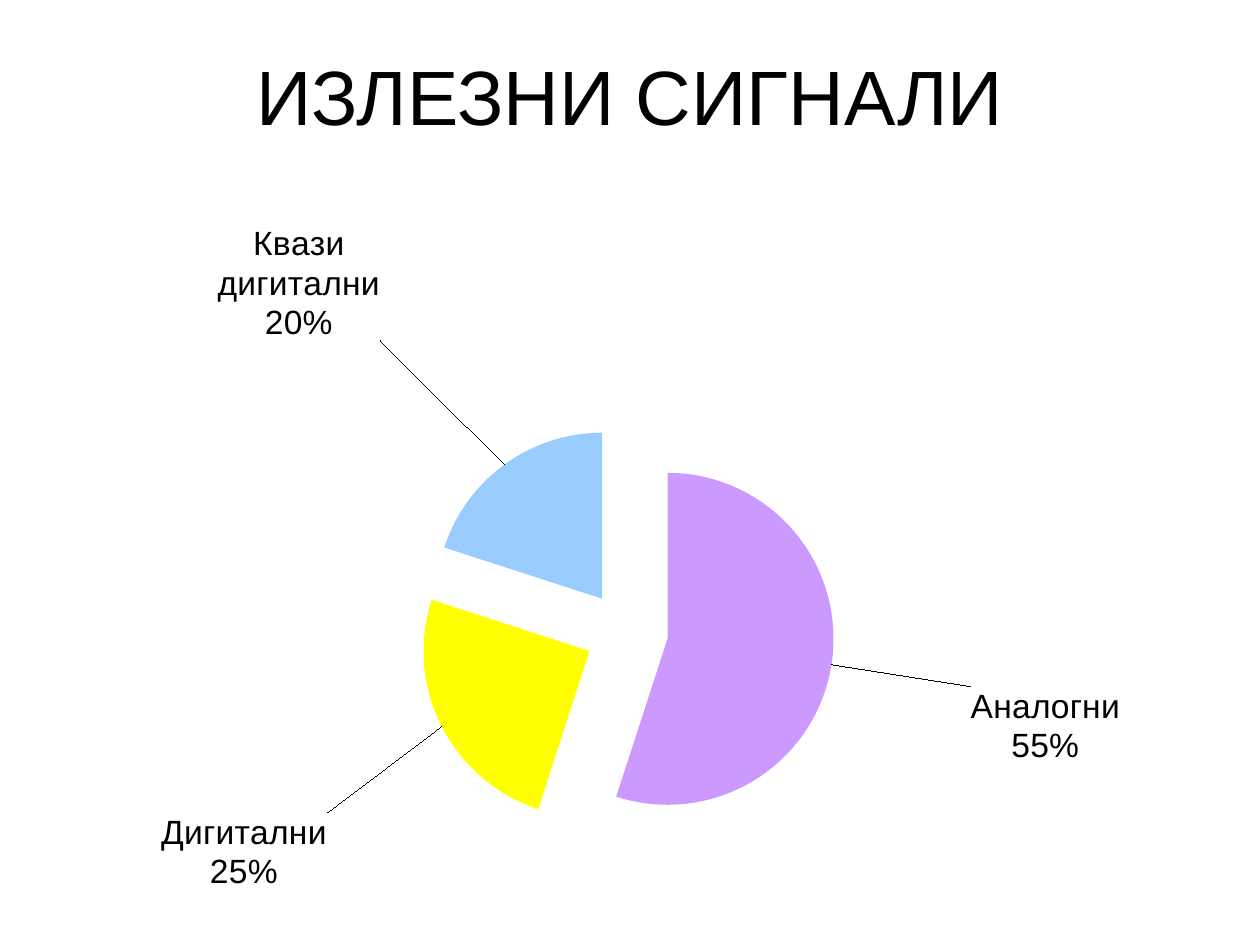
from lxml import etree
from pptx import Presentation
from pptx.chart.data import CategoryChartData
from pptx.dml.color import RGBColor
from pptx.enum.chart import XL_CHART_TYPE, XL_LABEL_POSITION
from pptx.enum.text import MSO_ANCHOR, PP_ALIGN
from pptx.oxml import parse_xml
from pptx.oxml.ns import nsdecls, qn
from pptx.util import Inches, Pt

PIE = XL_CHART_TYPE.PIE
OUTSIDE = XL_LABEL_POSITION.OUTSIDE_END
MIDDLE = MSO_ANCHOR.MIDDLE
CENTER = PP_ALIGN.CENTER

TITLE = "ИЗЛЕЗНИ СИГНАЛИ"
SLICES = [
    ("Аналогни", 55, "CC99FF", (0.11, 0.03)),
    ("Дигитални", 25, "FFFF00", (-0.09, 0.12)),
    ("Квази дигитални", 20, "99CCFF", (-0.1, -0.17)),
]


def rgb(value):
    return RGBColor.from_string(value)


def format_font(font, size, color="000000", name="Arial", bold=False):
    font.size = Pt(size)
    font.name = name
    font.bold = bold
    font.color.rgb = rgb(color)


def write(tf, text, align=CENTER, **fmt):
    tf.text = text
    for p in tf.paragraphs:
        p.alignment = align
        for r in p.runs:
            format_font(r.font, **fmt)


def layout(**values):
    items = "".join(f'<c:{k} val="{v}"/>' for k, v in values.items())
    return parse_xml(
        f'<c:layout {nsdecls("c")}><c:manualLayout>{items}</c:manualLayout></c:layout>'
    )


class SlideBuilder:
    def __init__(self, prs):
        self.slide = prs.slides.add_slide(prs.slide_layouts[5])

    def title(self, text, x, y, w, h):
        sp = self.slide.shapes.title
        sp.left, sp.top, sp.width, sp.height = map(Inches, (x, y, w, h))
        sp.fill.solid()
        sp.fill.fore_color.rgb = rgb("FFFFFF")
        sp.text_frame.vertical_anchor = MIDDLE
        write(sp.text_frame, text, size=44)

    def pie(self, name, slices, x, y, w, h, plot, explosion):
        data = CategoryChartData(number_format="0")
        data.categories = [s[0] for s in slices]
        data.add_series(name, [s[1] for s in slices])
        frame = self.slide.shapes.add_chart(PIE, *map(Inches, (x, y, w, h)), data)
        chart = frame.chart
        chart.has_legend = False
        chart.has_title = False
        format_font(chart.font, 19.2)
        pie = chart.plots[0]
        pie.vary_by_categories = True
        area = chart.element.find(".//" + qn("c:plotArea"))
        for old in area.findall(qn("c:layout")):
            area.remove(old)
        area.insert(0, layout(layoutTarget="inner", xMode="edge", yMode="edge", **plot))

        series = pie.series[0]
        tx = series._element.find(qn("c:tx"))
        tx.addnext(parse_xml(f'<c:explosion {nsdecls("c")} val="{explosion}"/>'))
        labels = series.data_labels
        labels.show_value = False
        labels.show_category_name = True
        labels.show_percentage = True
        labels.number_format = "0%"
        labels.number_format_is_linked = False
        format_font(labels.font, 19.2)
        labels_xml = series._element.find(qn("c:dLbls"))
        leader = labels_xml.find(qn("c:showLeaderLines"))
        if leader is None:
            leader = etree.SubElement(labels_xml, qn("c:showLeaderLines"))
        leader.set("val", "1")

        for i, (category, value, color, offset) in enumerate(slices):
            point = series.points[i]
            point.format.fill.solid()
            point.format.fill.fore_color.rgb = rgb(color)
            point.format.line.fill.background()
            self.label(point.data_label, labels_xml, i, f"{category}\n{value}%", offset)

    def label(self, label, labels_xml, index, text, offset):
        write(label.text_frame, text, size=19.2)
        label.position = OUTSIDE
        item = labels_xml.findall(qn("c:dLbl"))[index]
        item.find(qn("c:idx")).addnext(layout(x=offset[0], y=offset[1]))
        for tag, val in (("showVal", "0"), ("showCatName", "1"), ("showPercent", "1")):
            item.find(qn("c:" + tag)).set("val", val)


def main():
    prs = Presentation()
    prs.slide_width, prs.slide_height = Inches(10), Inches(7.5)
    s = SlideBuilder(prs)
    s.title(TITLE, 0.25, 0.14, 9.5, 1.22)
    s.pie(TITLE, SLICES, -0.59, 1.78, 9.51, 5.49,
          plot={"x": 0.41, "y": 0.29, "w": 0.35, "h": 0.6}, explosion=25)
    prs.save("out.pptx")


if __name__ == "__main__":
    main()
